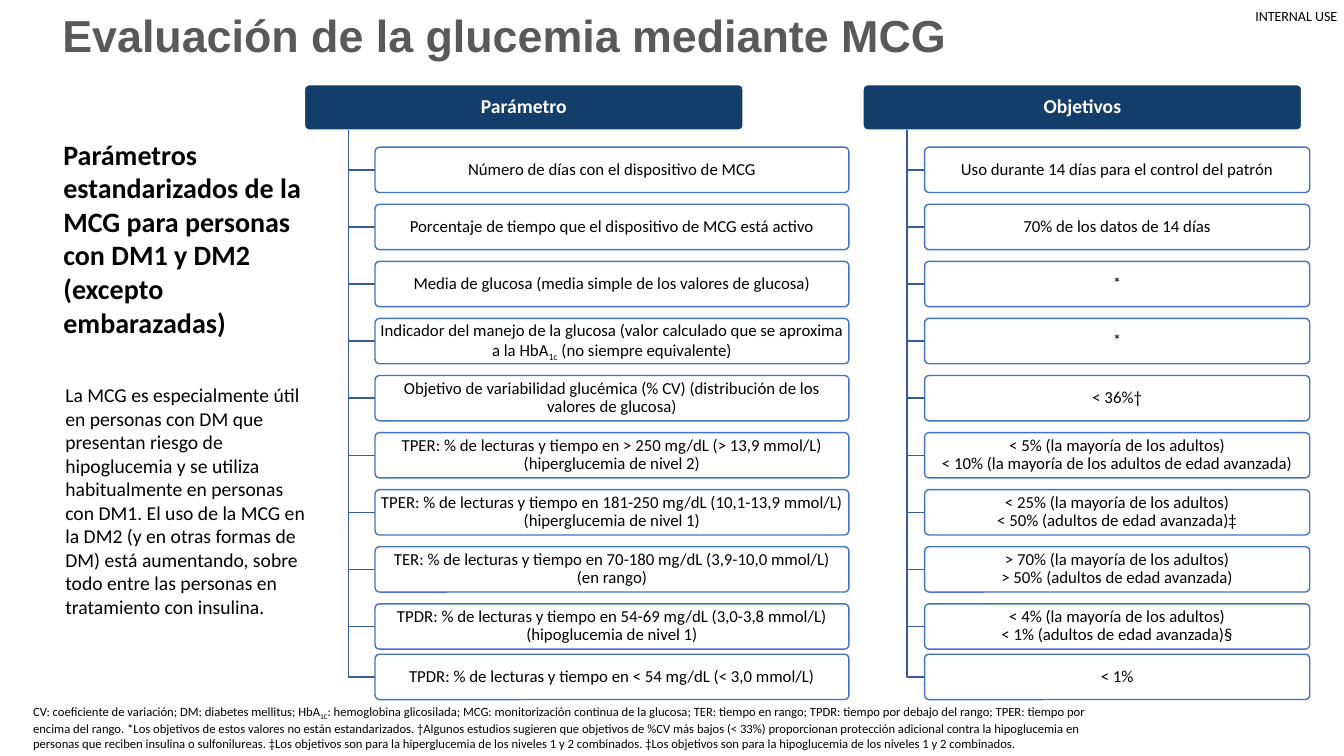
"""Build a slide of glucose monitoring parameters and their targets."""
import pptx
import pptx.dml.color
import pptx.enum.shapes
import pptx.enum.text
import pptx.oxml.ns
import pptx.util
from lxml import etree
from pptx.util import Inches

COLORS = {
    "black": "000000",
    "white": "FFFFFF",
    "title": "595959",
    "header": "123E69",
    "border": "4472C4",
    "branch": "365B9D",
}

TITLE = "Evaluación de la glucemia mediante MCG"
SUBTITLE = "Parámetros estandarizados de la MCG para personas con DM1 y DM2 (excepto embarazadas)"
SUMMARY = (
    "La MCG es especialmente útil en personas con DM que presentan riesgo de hipoglucemia "
    "y se utiliza habitualmente en personas con DM1. El uso de la MCG en la DM2 (y en otras "
    "formas de DM) está aumentando, sobre todo entre las personas en tratamiento con insulina."
)
FOOTNOTE = (
    "CV: coeficiente de variación; DM: diabetes mellitus; HbA~1C~: hemoglobina glicosilada; "
    "MCG: monitorización continua de la glucosa; TER: tiempo en rango; TPDR: tiempo por debajo "
    "del rango; TPER: tiempo por encima del rango. *Los objetivos de estos valores no están "
    "estandarizados. †Algunos estudios sugieren que objetivos de %CV más bajos (< 33%) "
    "proporcionan protección adicional contra la hipoglucemia en personas que reciben insulina "
    "o sulfonilureas. ‡Los objetivos son para la hiperglucemia de los niveles 1 y 2 combinados. "
    "‡Los objetivos son para la hipoglucemia de los niveles 1 y 2 combinados."
)
PARAMETERS = [
    "Número de días con el dispositivo de MCG",
    "Porcentaje de tiempo que el dispositivo de MCG está activo",
    "Media de glucosa (media simple de los valores de glucosa)",
    "Indicador del manejo de la glucosa (valor calculado que se aproxima a la HbA~1c~ (no siempre equivalente)",
    "Objetivo de variabilidad glucémica (% CV) (distribución de los valores de glucosa)",
    "TPER: % de lecturas y tiempo en > 250 mg/dL (> 13,9 mmol/L) (hiperglucemia de nivel 2)",
    "TPER: % de lecturas y tiempo en 181-250 mg/dL (10,1-13,9 mmol/L) (hiperglucemia de nivel 1)",
    "TER: % de lecturas y tiempo en 70-180 mg/dL (3,9-10,0 mmol/L)\v(en rango)",
    "TPDR: % de lecturas y tiempo en 54-69 mg/dL (3,0-3,8 mmol/L) (hipoglucemia de nivel 1)",
    "TPDR: % de lecturas y tiempo en < 54 mg/dL (< 3,0 mmol/L)",
]
TARGETS = [
    "Uso durante 14 días para el control del patrón",
    "70% de los datos de 14 días",
    "*",
    "*",
    "< 36%†",
    "< 5% (la mayoría de los adultos)\n< 10% (la mayoría de los adultos de edad avanzada)",
    "< 25% (la mayoría de los adultos)\n< 50% (adultos de edad avanzada)‡",
    "> 70% (la mayoría de los adultos)\n> 50% (adultos de edad avanzada)",
    "< 4% (la mayoría de los adultos)\n< 1% (adultos de edad avanzada)§",
    "< 1%",
]

HEADER_TOP = 0.84
HEADER_WIDTH = 4.35
CARD_HEIGHT = 0.45
FIRST_TOP, NINTH_TOP, LAST_TOP = 1.46, 5.99, 6.49
CARD_TOPS = [FIRST_TOP + (NINTH_TOP - FIRST_TOP) / 8 * row for row in range(9)] + [LAST_TOP]


def rgb(name):
    """Return the named colour."""
    return pptx.dml.color.RGBColor.from_string(COLORS[name])


def write_text(frame, text, size, color="black", bold=False, font="Calibri", align=None, spacing=None):
    """Fill a frame with one paragraph a line; tildes enclose subscripts."""
    frame.word_wrap = True
    for number, line in enumerate(text.split("\n")):
        para = frame.add_paragraph() if number else frame.paragraphs[0]
        first, *rest = line.split("~")
        para.text = first
        for position, piece in enumerate(rest):
            span = para.add_run()
            span.text = piece
            if position % 2 == 0:
                span._r.get_or_add_rPr().set("baseline", "-25000")
        para.alignment = align
        para.line_spacing = spacing
        para.font.name = font
        para.font.size = pptx.util.Pt(size)
        para.font.bold = bold
        para.font.color.rgb = rgb(color)


def add_text(page, left, top, width, height, text, size, **style):
    """Add a text box and return its frame."""
    box = page.shapes.add_textbox(Inches(left), Inches(top), Inches(width), Inches(height))
    write_text(box.text_frame, text, size, **style)
    return box.text_frame


def add_card(page, left, top, width, text, size, fill, line, alpha=None, **style):
    """Add a rounded card with centred text."""
    card = page.shapes.add_shape(
        pptx.enum.shapes.MSO_SHAPE.ROUNDED_RECTANGLE,
        Inches(left), Inches(top), Inches(width), Inches(CARD_HEIGHT))
    card.adjustments[0] = 0.1
    card.shadow.inherit = False
    card.fill.solid()
    card.fill.fore_color.rgb = rgb(fill)
    if alpha:
        tint = card.fill._xPr.find(".//" + pptx.oxml.ns.qn("a:srgbClr"))
        etree.SubElement(tint, pptx.oxml.ns.qn("a:alpha")).set("val", str(alpha * 1000))
    card.line.color.rgb = rgb(line)
    card.line.width = pptx.util.Pt(1)
    frame = card.text_frame
    frame.margin_left = frame.margin_right = Inches(0.03)
    frame.margin_top = frame.margin_bottom = Inches(0.02)
    frame.vertical_anchor = pptx.enum.text.MSO_ANCHOR.MIDDLE
    write_text(frame, text, size, align=pptx.enum.text.PP_ALIGN.CENTER, spacing=0.9, **style)


def add_branch(page, left, top, right, bottom):
    """Add the open elbow from a header down to a card."""
    builder = page.shapes.build_freeform(Inches(left), Inches(top))
    builder.add_line_segments(
        [(Inches(left), Inches(bottom)), (Inches(right), Inches(bottom))], close=False)
    branch = builder.convert_to_shape()
    branch.shadow.inherit = False
    branch.fill.background()
    branch.line.color.rgb = rgb("branch")
    branch.line.width = pptx.util.Pt(1)


def add_column(page, header, left, card_left, card_width, entries):
    """Add a header with its branches and cards."""
    add_card(page, left, HEADER_TOP, HEADER_WIDTH, header, 14, "header", "white",
             color="white", bold=True)
    for top, entry in zip(CARD_TOPS, entries):
        add_branch(page, left + HEADER_WIDTH / 10, HEADER_TOP + CARD_HEIGHT,
                   card_left, top + CARD_HEIGHT / 2)
        add_card(page, card_left, top, card_width, entry, 12, "white", "border", alpha=90)


def main():
    """Build and save the slide."""
    deck = pptx.Presentation()
    deck.slide_width, deck.slide_height = Inches(13.33), Inches(7.5)
    page = deck.slides.add_slide(deck.slide_layouts[6])
    label = add_text(page, 12.45, 0.07, 0.85, 0.17, "INTERNAL USE", 10)
    label.margin_left = label.margin_right = label.margin_top = label.margin_bottom = 0
    label.word_wrap = False
    title = add_text(page, 0.52, -0.39, 11.54, 1.54, TITLE, 32,
                     color="title", bold=True, font="Arial", spacing=0.9)
    title.vertical_anchor = pptx.enum.text.MSO_ANCHOR.MIDDLE
    add_text(page, 0.53, 1.31, 2.77, 2.12, SUBTITLE, 20, bold=True)
    add_text(page, 0.23, 6.93, 10.69, 0.56, FOOTNOTE, 9)
    add_text(page, 0.55, 3.75, 2.67, 2.46, SUMMARY, 14)
    add_column(page, "Parámetro", 3.02, 3.72, 4.7, PARAMETERS)
    add_column(page, "Objetivos", 8.56, 9.17, 3.82, TARGETS)
    deck.save("out.pptx")


if __name__ == "__main__":
    main()
